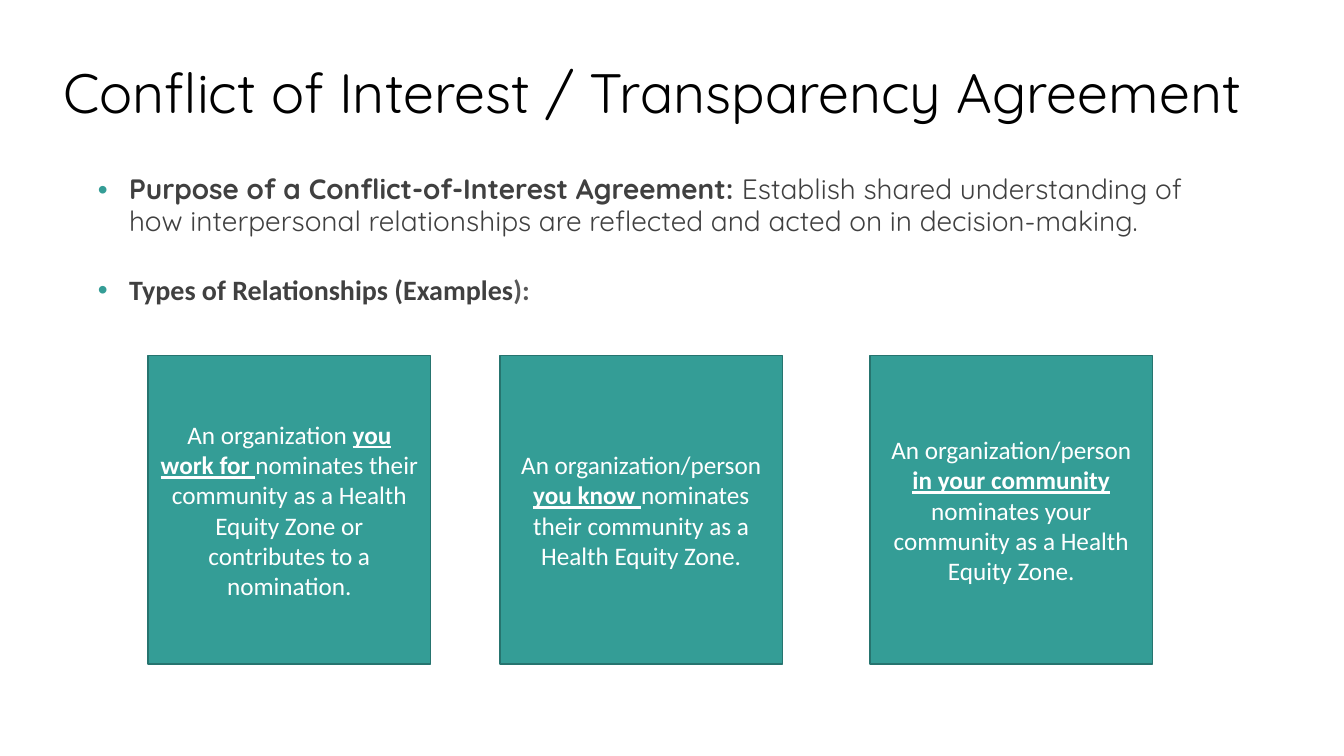
"""Build the conflict of interest slide with its three relationship cards."""
from dataclasses import dataclass

from lxml import etree
from pptx import Presentation
from pptx.dml.color import RGBColor
from pptx.enum.shapes import MSO_SHAPE
from pptx.enum.text import MSO_ANCHOR, MSO_AUTO_SIZE, PP_ALIGN
from pptx.oxml.ns import qn
from pptx.util import Emu, Pt

EMU_PER_PX = 9144
RECTANGLE = MSO_SHAPE.RECTANGLE
MIDDLE, TOP = MSO_ANCHOR.MIDDLE, MSO_ANCHOR.TOP
LEFT, CENTER = PP_ALIGN.LEFT, PP_ALIGN.CENTER
NO_AUTOFIT = MSO_AUTO_SIZE.NONE

TEAL, DARK_TEAL = "349D96", "26746F"
BLACK, WHITE, CHARCOAL, GRAY = "000000", "FFFFFF", "404040", "595959"
HEADING_FONT, CARD_FONT = "Quicksand", "Calibri"
CARD_TOP, CARD_WIDTH, CARD_HEIGHT = 353, 280, 306
BULLET_INDENT = 31


@dataclass(frozen=True)
class Span:
    text: str
    font: str
    size: float
    color: str
    bold: bool = False
    underline: bool = False


@dataclass(frozen=True)
class Bullet:
    spans: tuple[Span, ...]
    space_before: int


@dataclass(frozen=True)
class Card:
    left: int
    opening: str
    emphasis: str
    ending: str


TITLE = Span("Conflict of Interest / Transparency Agreement", HEADING_FONT, 39.6, BLACK)
BULLETS = (
    Bullet((
        Span("Purpose of a Conflict-of-Interest Agreement: ", HEADING_FONT, 20, CHARCOAL, True),
        Span("Establish shared understanding of how interpersonal relationships "
             "are reflected and acted on in decision-making.", HEADING_FONT, 20, CHARCOAL),
    ), 0),
    Bullet((
        Span("Types of Relationships (Examples", CARD_FONT, 20, CHARCOAL, True),
        Span("):", CARD_FONT, 20, GRAY, True),
    ), 26),
)
CARDS = (
    Card(147, "An organization ", "you work for ",
         "nominates their community as a Health Equity Zone or contributes to a nomination."),
    Card(496, "An organization/person ", "you know ",
         "nominates their community as a Health Equity Zone."),
    Card(863, "An organization/person ", "in your community",
         " nominates your community as a Health Equity Zone."),
)


def px(length: int) -> Emu:
    """Turn a length in px into EMU."""
    return Emu(length * EMU_PER_PX)


def rgb(color: str) -> RGBColor:
    """Turn a hex string into a colour."""
    return RGBColor.from_string(color)


def add_spans(para, spans: tuple[Span, ...]) -> None:
    """Add formatted runs to a paragraph."""
    for span in spans:
        run = para.add_run()
        run.text = span.text
        run.font.name = span.font
        run.font.size = Pt(span.size)
        run.font.bold = span.bold
        run.font.underline = span.underline
        run.font.color.rgb = rgb(span.color)


def place(box, left: int, top: int, width: int, height: int) -> None:
    """Move and size a placeholder."""
    box.left, box.top = px(left), px(top)
    box.width, box.height = px(width), px(height)


def set_bullet(para) -> None:
    """Give a paragraph a teal bullet with a hanging indent."""
    properties = para._p.get_or_add_pPr()
    properties.set("marL", str(px(BULLET_INDENT)))
    properties.set("indent", str(px(-BULLET_INDENT)))
    bullet_color = etree.SubElement(properties, qn("a:buClr"))
    etree.SubElement(bullet_color, qn("a:srgbClr"), val=TEAL)
    etree.SubElement(properties, qn("a:buFont"), typeface="Arial")
    etree.SubElement(properties, qn("a:buChar"), char="•")


def fill_title(box) -> None:
    """Write the title line."""
    place(box, 53, 64, 1280, 62)
    frame = box.text_frame
    frame.auto_size = NO_AUTOFIT
    frame.vertical_anchor = MIDDLE
    para = frame.paragraphs[0]
    para.alignment = LEFT
    para.line_spacing = 0.9
    add_spans(para, (TITLE,))


def fill_body(box) -> None:
    """Write the bulleted list."""
    place(box, 87, 168, 1136, 518)
    frame = box.text_frame
    frame.auto_size = NO_AUTOFIT
    frame.vertical_anchor = TOP
    for index, bullet in enumerate(BULLETS):
        para = frame.add_paragraph() if index else frame.paragraphs[0]
        para.line_spacing = 0.95
        para.space_before = Pt(bullet.space_before)
        set_bullet(para)
        add_spans(para, bullet.spans)


def add_card(page, card: Card) -> None:
    """Draw one relationship card."""
    box = page.shapes.add_shape(
        RECTANGLE, px(card.left), px(CARD_TOP), px(CARD_WIDTH), px(CARD_HEIGHT))
    box.shadow.inherit = False
    box.fill.solid()
    box.fill.fore_color.rgb = rgb(TEAL)
    box.line.color.rgb = rgb(DARK_TEAL)
    box.line.width = Pt(1)
    frame = box.text_frame
    frame.word_wrap = True
    frame.vertical_anchor = MIDDLE
    para = frame.paragraphs[0]
    para.alignment = CENTER
    add_spans(para, (
        Span(card.opening, CARD_FONT, 18, WHITE),
        Span(card.emphasis, CARD_FONT, 18, WHITE, True, True),
        Span(card.ending, CARD_FONT, 18, WHITE),
    ))


def main() -> None:
    """Build and save the deck."""
    deck = Presentation()
    deck.slide_width, deck.slide_height = px(1333), px(750)
    page = deck.slides.add_slide(deck.slide_layouts[1])
    fill_title(page.shapes.title)
    fill_body(page.placeholders[1])
    for card in CARDS:
        add_card(page, card)
    deck.save("out.pptx")


if __name__ == "__main__":
    main()
